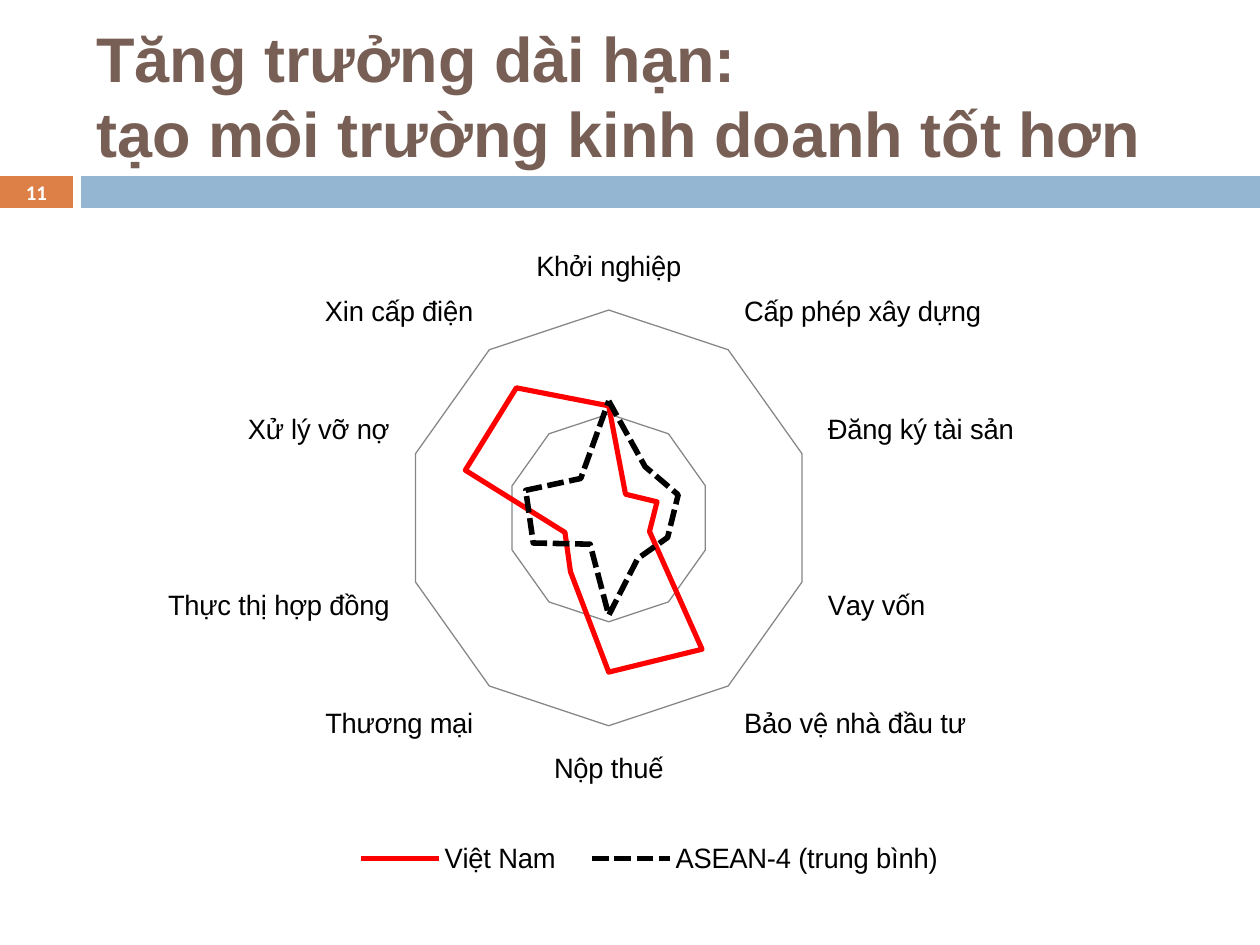
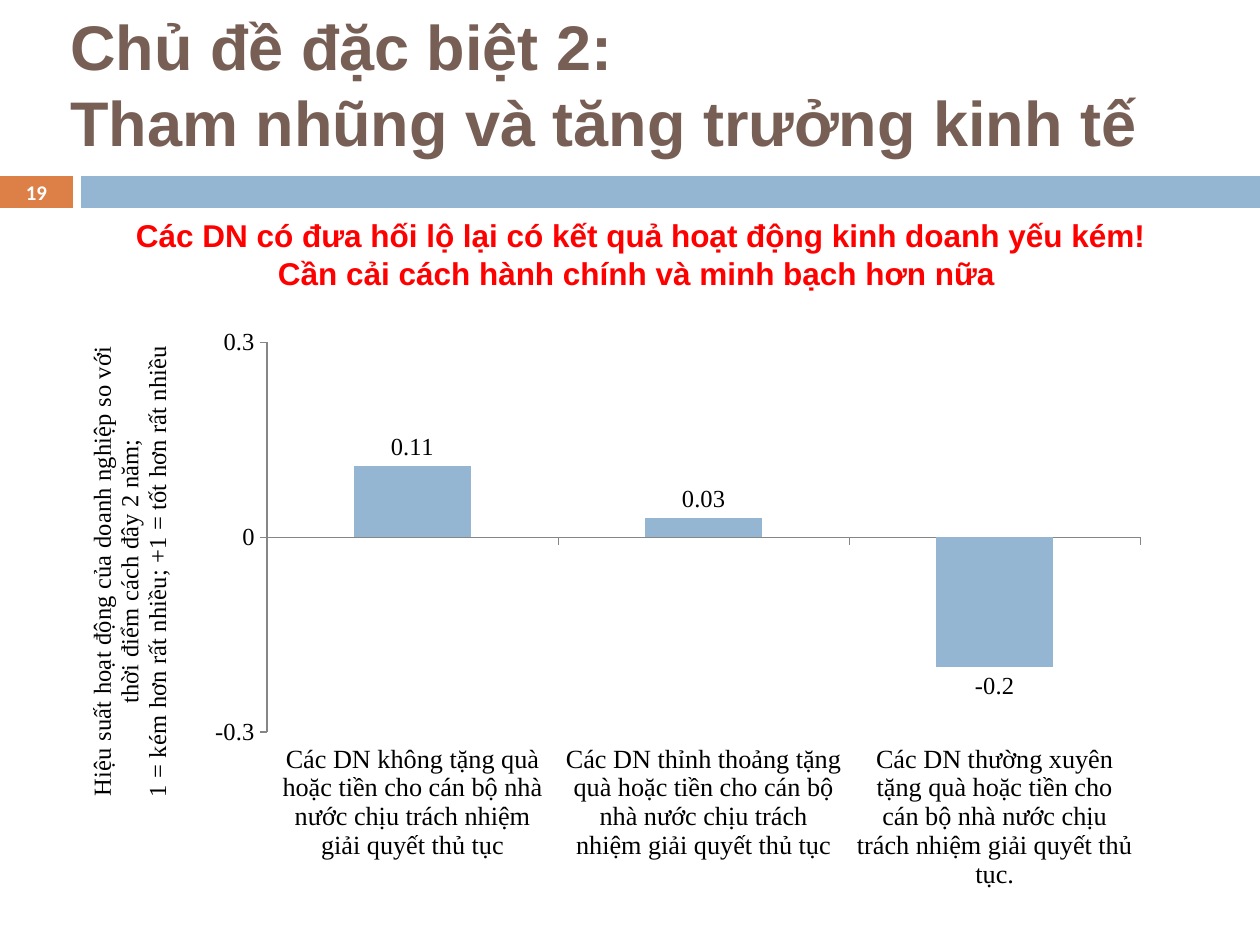
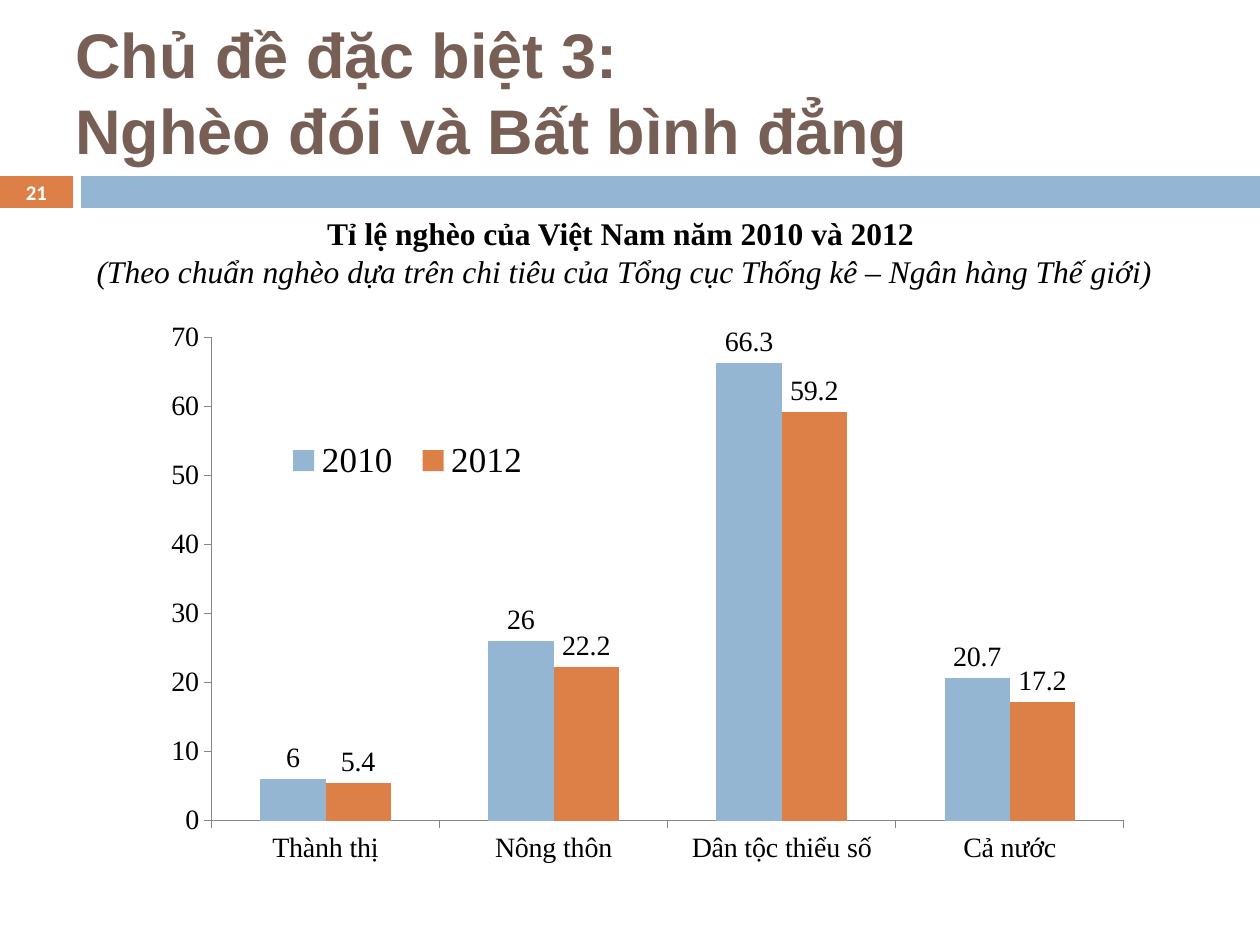
from dataclasses import dataclass

from lxml.etree import SubElement
from pptx import Presentation
from pptx.chart.data import CategoryChartData
from pptx.dml.color import RGBColor
from pptx.enum.chart import (XL_CHART_TYPE, XL_LABEL_POSITION, XL_LEGEND_POSITION,
                             XL_TICK_LABEL_POSITION, XL_TICK_MARK)
from pptx.enum.dml import MSO_LINE
from pptx.enum.shapes import MSO_SHAPE
from pptx.enum.text import MSO_ANCHOR, PP_ALIGN
from pptx.oxml import parse_xml
from pptx.oxml.ns import nsdecls, qn
from pptx.util import Pt

PX = 914400 // 126


@dataclass(frozen=True)
class Theme:
    brown: str = "775F55"
    blue: str = "94B6D2"
    orange: str = "DD8047"
    red: str = "FF0000"
    black: str = "000000"
    white: str = "FFFFFF"
    grey: str = "868686"
    sans: str = "Arial"
    serif: str = "Times New Roman"
    badge: str = "Calibri"
    head: float = 36
    sub: float = 18
    page: float = 11.9


T = Theme()
HEAD = {"size": Pt(T.head), "name": T.sans, "bold": True}
PAGE = {"size": Pt(T.page), "name": T.badge, "bold": True}
ALERT = {"size": Pt(T.sub), "name": T.sans, "bold": True}
STRONG = {"size": Pt(T.sub), "name": T.serif, "bold": True}
NOTE = {"size": Pt(T.sub), "name": T.serif, "italic": True}


def write(frame, lines, colour, align=PP_ALIGN.CENTER, anchor=MSO_ANCHOR.MIDDLE):
    """Fill a text frame with (text, font values) lines."""
    frame.word_wrap = True
    frame.vertical_anchor = anchor
    for num, (text, look) in enumerate(lines):
        para = frame.add_paragraph() if num else frame.paragraphs[0]
        para.text = text
        para.alignment = align
        para.font.color.rgb = RGBColor.from_string(colour)
        for key, value in look.items():
            setattr(para.font, key, value)


def place(node, spot, box, inner=False):
    """Give a chart part a manual layout, in fractions of the chart."""
    old = node.find(qn("c:layout"))
    if old is not None:
        node.remove(old)
    layout = parse_xml(f"<c:layout {nsdecls('c')}><c:manualLayout/></c:layout>")
    node.insert(spot, layout)
    rules = [("layoutTarget", "inner")] if inner else []
    rules += [("xMode", "edge"), ("yMode", "edge"), *zip("xywh", box)]
    for tag, value in rules:
        SubElement(layout[0], qn(f"c:{tag}")).set("val", str(value))


SLIDES = [
    {
        "page": 11,
        "title": "Tăng trưởng dài hạn:\vtạo môi trường kinh doanh tốt hơn",
        "head": (84, 32, 1124, 126),
        "kind": XL_CHART_TYPE.RADAR,
        "chart": (168, 199, 924, 725),
        "plot": (0.24, 0.15, 0.45, 0.58),
        "font": {"name": T.sans, "size": Pt(16)},
        "cats": ["Khởi nghiệp", "Cấp phép xây dựng", "Đăng ký tài sản", "Vay vốn",
                 "Bảo vệ nhà đầu tư", "Nộp thuế", "Thương mại", "Thực thị hợp đồng",
                 "Xử lý vỡ nợ", "Xin cấp điện"],
        "series": [
            ("Việt Nam", T.red, [69, 18, 32, 27, 100, 95, 41, 29, 95, 99],
             {"width": Pt(3)}),
            ("ASEAN-4 (trung bình)", T.black, [72, 39, 46, 39, 31, 60, 20, 50, 55, 30],
             {"width": Pt(3.25), "dash_style": MSO_LINE.SQUARE_DOT}),
        ],
        "val": {"minimum_scale": 0, "maximum_scale": 128, "major_unit": 64,
                "has_major_gridlines": True, "visible": False},
        "legend": (XL_LEGEND_POSITION.BOTTOM, 16, (0.16, 0.88, 0.7, 0.06)),
    },
    {
        "page": 19,
        "title": "Chủ đề đặc biệt 2:\vTham nhũng và tăng trưởng kinh tế",
        "head": (58, 23, 1134, 120),
        "sub": (53, 210, 1176, 90),
        "lines": [
            ("Các DN có đưa hối lộ lại có kết quả hoạt động kinh doanh yếu kém!", ALERT),
            ("Cần cải cách hành chính và minh bạch hơn nữa ", ALERT),
        ],
        "ink": T.red,
        "kind": XL_CHART_TYPE.COLUMN_CLUSTERED,
        "chart": (63, 315, 1134, 609),
        "plot": (0.18, 0.045, 0.77, 0.64),
        "font": {"name": T.serif, "size": Pt(14)},
        "cats": [
            "Các DN không tặng quà hoặc tiền cho cán bộ nhà nước "
            "chịu trách nhiệm giải quyết thủ tục",
            "Các DN thỉnh thoảng tặng quà hoặc tiền cho cán bộ nhà nước "
            "chịu trách nhiệm giải quyết thủ tục",
            "Các DN thường xuyên tặng quà hoặc tiền cho cán bộ nhà nước "
            "chịu trách nhiệm giải quyết thủ tục.",
        ],
        "series": [("Series 1", T.blue, [0.11, 0.03, -0.2], {})],
        "cat": {"tick_label_position": XL_TICK_LABEL_POSITION.LOW},
        "labels": 15,
        "val": {"minimum_scale": -0.3, "maximum_scale": 0.3, "major_unit": 0.3,
                "has_major_gridlines": False},
        "axis": ["Hiệu suất hoạt động của doanh nghiệp so với thời điểm cách đây 2 năm;",
                 "1 = kém hơn rất nhiều; +1 = tốt hơn rất nhiều"],
    },
    {
        "page": 21,
        "title": "Chủ đề đặc biệt 3:\vNghèo đói và Bất bình đẳng",
        "head": (63, 21, 1134, 141),
        "sub": (84, 208, 1081, 90),
        "lines": [
            ("Tỉ lệ nghèo của Việt Nam năm 2010 và 2012 ", STRONG),
            ("(Theo chuẩn nghèo dựa trên chi tiêu của Tổng cục Thống kê"
             " – Ngân hàng Thế giới)", NOTE),
        ],
        "ink": T.black,
        "kind": XL_CHART_TYPE.COLUMN_CLUSTERED,
        "chart": (116, 305, 1061, 599),
        "plot": (0.09, 0.054, 0.86, 0.807),
        "font": {"name": T.serif, "size": Pt(16)},
        "cats": ["Thành thị", "Nông thôn", "Dân tộc thiểu số", "Cả nước"],
        "series": [("2010", T.blue, [6, 26, 66.3, 20.7], {}),
                   ("2012", T.orange, [5.4, 22.2, 59.2, 17.2], {})],
        "val": {"minimum_scale": 0, "maximum_scale": 70, "major_unit": 10,
                "has_major_gridlines": False},
        "legend": (XL_LEGEND_POSITION.RIGHT, 20, (0.15, 0.21, 0.25, 0.1)),
    },
]

deck = Presentation()
deck.slide_width, deck.slide_height = 1260 * PX, 945 * PX

for item in SLIDES:
    slide = deck.slides.add_slide(deck.slide_layouts[6])
    shapes = slide.shapes

    # Bands, page number and title
    for left, width, colour in [(81, 1179, T.blue), (0, 73, T.orange)]:
        band = shapes.add_shape(MSO_SHAPE.RECTANGLE, left * PX, 176 * PX,
                                width * PX, 32 * PX)
        band.shadow.inherit = False
        band.fill.solid()
        band.fill.fore_color.rgb = RGBColor.from_string(colour)
        band.line.fill.background()
    write(band.text_frame, [(str(item["page"]), PAGE)], T.white)

    title = shapes.add_textbox(*[n * PX for n in item["head"]])
    write(title.text_frame, [(item["title"], HEAD)], T.brown, PP_ALIGN.LEFT)

    if "sub" in item:
        sub = shapes.add_textbox(*[n * PX for n in item["sub"]])
        write(sub.text_frame, item["lines"], item["ink"], anchor=MSO_ANCHOR.TOP)

    # Chart data and overall look
    data = CategoryChartData()
    data.categories = item["cats"]
    for name, _, values, _ in item["series"]:
        data.add_series(name, values)
    chart = shapes.add_chart(item["kind"], *[n * PX for n in item["chart"]], data).chart
    chart.has_title = False
    chart.font.color.rgb = RGBColor.from_string(T.black)
    for key, value in item["font"].items():
        setattr(chart.font, key, value)
    body = chart.element.find(qn("c:chart"))
    body.addnext(parse_xml(f"<c:spPr {nsdecls('c', 'a')}><a:noFill/>"
                           "<a:ln><a:noFill/></a:ln></c:spPr>"))
    place(body.find(qn("c:plotArea")), 0, item["plot"], inner=True)

    # Axes
    cat, val = chart.category_axis, chart.value_axis
    for axis, extra in [(cat, item.get("cat", {})), (val, item["val"])]:
        looks = {"major_tick_mark": XL_TICK_MARK.OUTSIDE,
                 "minor_tick_mark": XL_TICK_MARK.NONE, **extra}
        for key, value in looks.items():
            setattr(axis, key, value)
        axis.format.line.color.rgb = RGBColor.from_string(T.grey)
    if val.has_major_gridlines:
        val.major_gridlines.format.line.color.rgb = RGBColor.from_string(T.grey)
    if "labels" in item:
        cat.tick_labels.font.size = Pt(item["labels"])
    if "axis" in item:
        look = {**item["font"], "bold": False}
        write(val.axis_title.text_frame, [(line, look) for line in item["axis"]], T.black)
        node = val.axis_title.element
        turn = node.find(".//" + qn("a:bodyPr"))
        turn.set("rot", "-5400000")
        turn.set("vert", "horz")
        place(node, 1, (0.017, 0.044))

    # Series
    plot = chart.plots[0]
    plot.vary_by_categories = False
    radar = item["kind"] == XL_CHART_TYPE.RADAR
    for series, (_, colour, _, stroke) in zip(plot.series, item["series"]):
        if radar:
            series.smooth = False
            series.format.line.color.rgb = RGBColor.from_string(colour)
            for key, value in stroke.items():
                setattr(series.format.line, key, value)
        else:
            series.invert_if_negative = False
            series.format.fill.solid()
            series.format.fill.fore_color.rgb = RGBColor.from_string(colour)
    if not radar:
        plot.gap_width, plot.overlap = 150, 0
        plot.has_data_labels = True
        plot.data_labels.show_value = True
        plot.data_labels.position = XL_LABEL_POSITION.OUTSIDE_END

    # Legend
    chart.has_legend = "legend" in item
    if chart.has_legend:
        side, size, box = item["legend"]
        legend = chart.legend
        legend.position = side
        legend.include_in_layout = False
        legend.font.size = Pt(size)
        place(legend.element if hasattr(legend, "element")
              else body.find(qn("c:legend")), 1, box)

deck.save("out.pptx")
